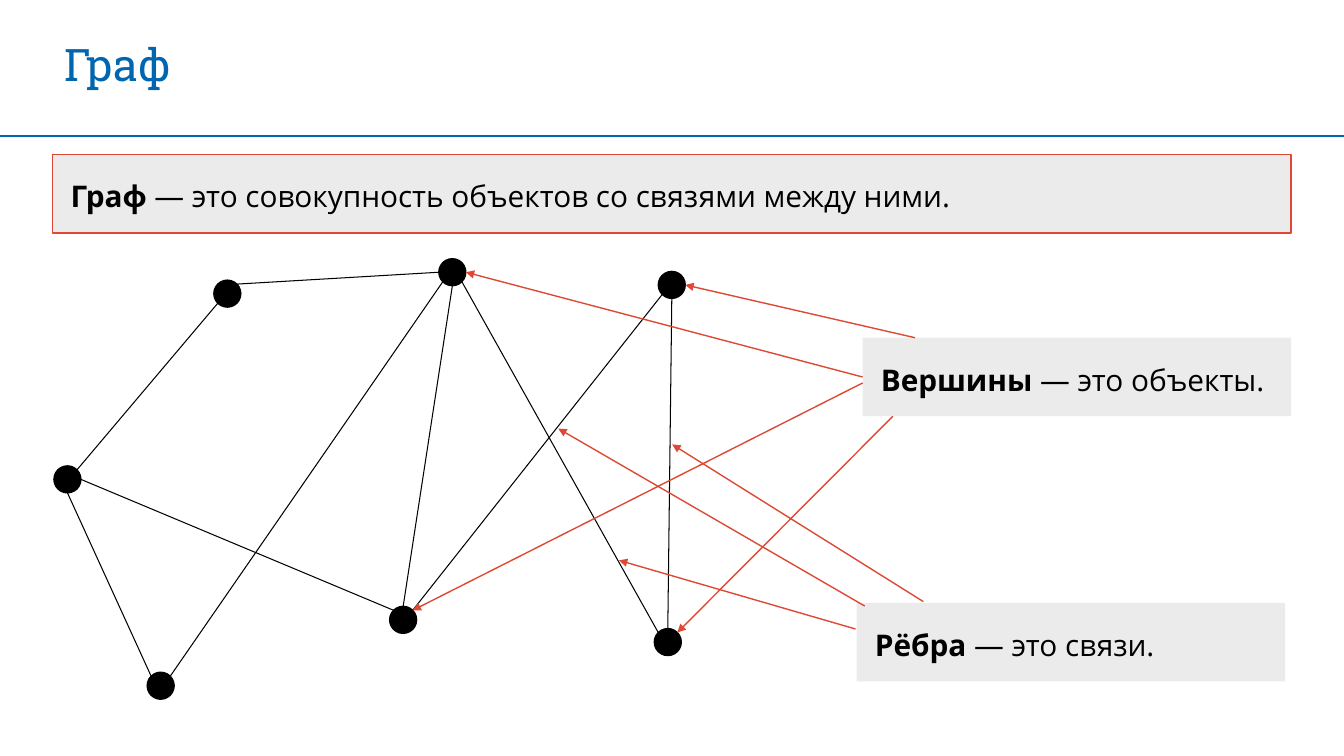
from math import cos, pi, sin

from lxml.etree import SubElement
from pptx import Presentation
from pptx.dml.color import RGBColor
from pptx.enum.shapes import MSO_CONNECTOR as Connector, MSO_SHAPE as Shape
from pptx.enum.text import MSO_ANCHOR as Anchor, MSO_AUTO_SIZE as AutoSize, PP_ALIGN as Align
from pptx.oxml.ns import qn
from pptx.util import Cm, Pt

BLUE = RGBColor(0x00, 0x66, 0xB0)
RED = RGBColor(0xDD, 0x49, 0x35)
GREY = RGBColor(0xD9, 0xD9, 0xD9)
BLACK = RGBColor(0x00, 0x00, 0x00)

WIDTH, HEIGHT = 33.87, 19.05
TITLE = "Граф"
RULE_Y = 3.43
PANEL_HEIGHT = 1.98
PANELS = [
    ("Граф ", "— это совокупность объектов со связями между ними.", 1.32, 3.89, 31.22, RED),
    ("Вершины ", "— это объекты.", 21.74, 8.51, 10.8, None),
    ("Рёбра ", "— это связи.", 21.59, 15.19, 10.8, None),
]

RADIUS = 0.34
VERTICES = {
    "A": (5.73, 7.4),
    "B": (11.4, 6.86),
    "C": (16.93, 7.18),
    "D": (16.83, 16.18),
    "E": (10.16, 15.62),
    "F": (4.05, 17.28),
    "G": (1.7, 12.08),
}
COMPASS = ["E", "NE", "N", "NW", "W", "SW", "S", "SE"]
EDGES = [
    ("G", "NE", "A", "SW"),
    ("A", "NE", "B", "W"),
    ("E", "NW", "G", "E"),
    ("E", "NE", "C", "SW"),
    ("F", "NE", "B", "SW"),
    ("E", "N", "B", "S"),
    ("D", "N", "C", "S"),
    ("G", "S", "F", "NW"),
    ("D", "NW", "B", "SE"),
]
VERTEX_ARROWS = [
    ((23.06, 8.51), "C", "E"),
    ((22.5, 10.49), "D", "NE"),
    ((21.74, 9.65), "E", "NE"),
    ((21.74, 9.5), "B", "E"),
]
EDGE_ARROWS = [
    ((23.27, 15.16), (16.94, 11.2)),
    ((21.56, 15.85), (15.6, 14.12)),
    ((21.79, 15.27), (14.07, 10.8)),
]


def rim(vertex, direction):
    """Return the point on a vertex circle in a compass direction."""
    x, y = VERTICES[vertex]
    angle = COMPASS.index(direction) * pi / 4
    return x + RADIUS * cos(angle), y - RADIUS * sin(angle)


def add_line(slide, start, end, color, weight, arrow=False):
    """Draw a straight line, with an arrowhead at its end if asked."""
    line = slide.shapes.add_connector(Connector.STRAIGHT, *map(Cm, start + end))
    line.line.color.rgb = color
    line.line.width = Pt(weight)
    if arrow:
        SubElement(line.line._get_or_add_ln(), qn("a:tailEnd"), type="triangle")
    SubElement(line._element.spPr, qn("a:effectLst"))


def add_run(paragraph, text, font, size, color, bold=False):
    """Append one formatted run."""
    run = paragraph.add_run()
    run.text = text
    run.font.name = font
    run.font.size = Pt(size)
    run.font.bold = bold
    run.font.color.rgb = color


def add_panel(slide, term, meaning, left, top, width, border):
    """Add a half-transparent panel that explains a term."""
    panel = slide.shapes.add_shape(
        Shape.RECTANGLE, Cm(left), Cm(top), Cm(width), Cm(PANEL_HEIGHT))
    panel.shadow.inherit = False
    panel.fill.solid()
    panel.fill.fore_color.rgb = GREY
    tint = panel._element.spPr.find(qn("a:solidFill"))[0]
    SubElement(tint, qn("a:alpha"), val="50000")
    if border:
        panel.line.color.rgb = border
        panel.line.width = Pt(1)
    else:
        panel.line.fill.background()
    frame = panel.text_frame
    frame.word_wrap = True
    frame.vertical_anchor = Anchor.TOP
    frame.margin_left = frame.margin_right = Cm(0.46)
    frame.margin_top = frame.margin_bottom = Cm(0.46)
    paragraph = frame.paragraphs[0]
    paragraph.alignment = Align.LEFT
    paragraph.line_spacing = Pt(29.3)
    add_run(paragraph, term, "Open Sans", 21.3, BLACK, True)
    add_run(paragraph, meaning, "Open Sans", 21.3, BLACK)


def add_title(slide):
    """Place and format the slide title."""
    title = slide.shapes.title
    title.left, title.top, title.width, title.height = map(Cm, (1.37, 0.79, 27.48, 1.63))
    frame = title.text_frame
    frame.auto_size = AutoSize.NONE
    frame.vertical_anchor = Anchor.MIDDLE
    frame.margin_top = frame.margin_bottom = 0
    frame.paragraphs[0].alignment = Align.LEFT
    add_run(frame.paragraphs[0], TITLE, "Roboto Slab", 32, BLUE)


def add_vertex(slide, x, y):
    """Draw one vertex of the graph."""
    vertex = slide.shapes.add_shape(
        Shape.OVAL, Cm(x - RADIUS), Cm(y - RADIUS), Cm(2 * RADIUS), Cm(2 * RADIUS))
    vertex.shadow.inherit = False
    vertex.fill.solid()
    vertex.fill.fore_color.rgb = BLACK
    vertex.line.color.rgb = BLACK
    vertex.line.width = Pt(1)


def main():
    """Build the slide about graphs and save it."""
    deck = Presentation()
    deck.slide_width, deck.slide_height = Cm(WIDTH), Cm(HEIGHT)
    slide = deck.slides.add_slide(deck.slide_layouts[5])
    add_title(slide)
    add_line(slide, (0, RULE_Y), (WIDTH, RULE_Y), BLUE, 1)
    for center in VERTICES.values():
        add_vertex(slide, *center)
    for first, first_side, second, second_side in EDGES:
        add_line(slide, rim(first, first_side), rim(second, second_side), BLACK, 0.75)
    for panel in PANELS:
        add_panel(slide, *panel)
    for start, vertex, side in VERTEX_ARROWS:
        add_line(slide, start, rim(vertex, side), RED, 1, arrow=True)
    for start, end in EDGE_ARROWS:
        add_line(slide, start, end, RED, 1, arrow=True)
    deck.save("out.pptx")


if __name__ == "__main__":
    main()
